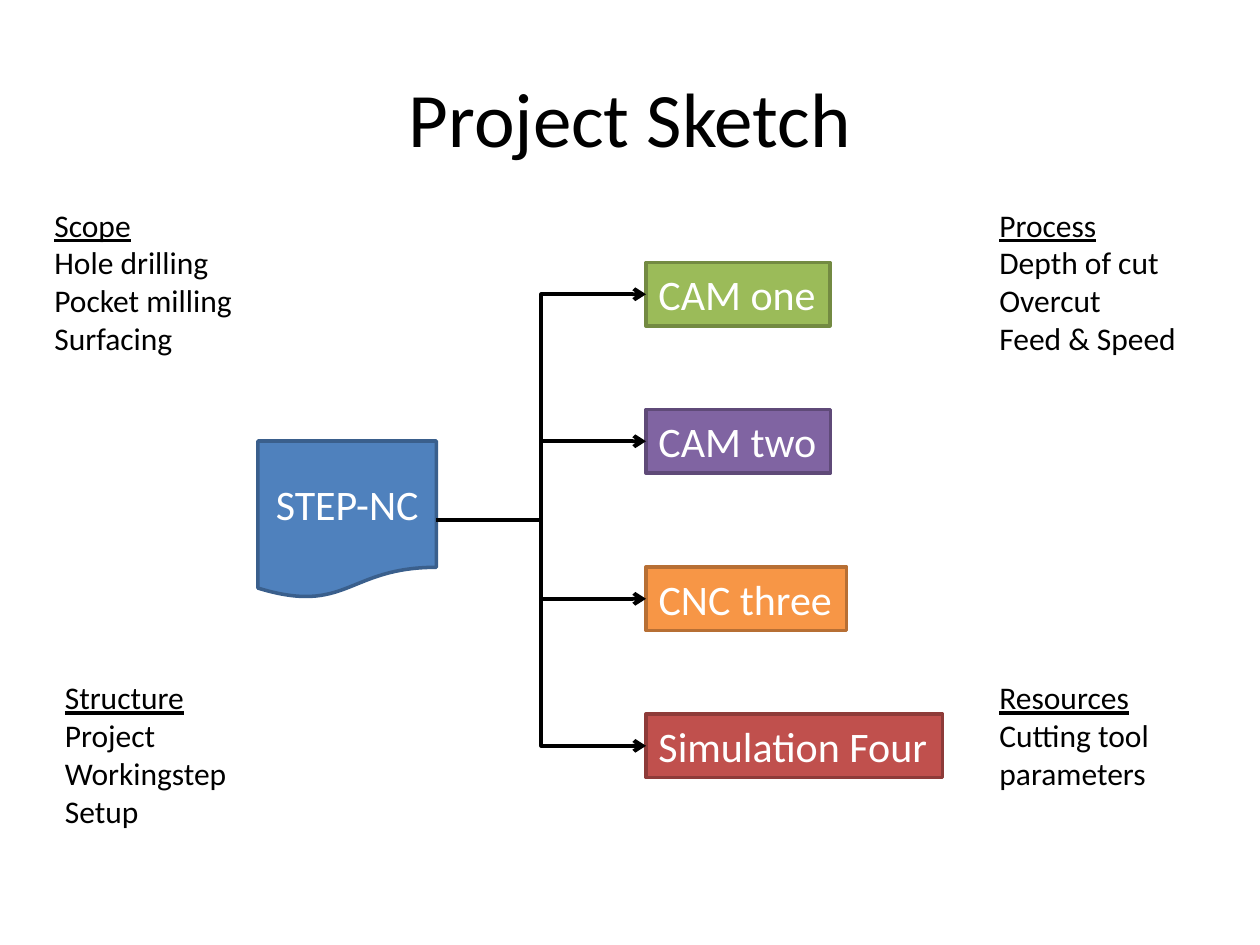
import pptx
import pptx.dml.color
import pptx.enum.shapes
import pptx.enum.text
import pptx.oxml
import pptx.oxml.ns
import pptx.util

Pt = pptx.util.Pt
SHAPES = pptx.enum.shapes.MSO_SHAPE
ALIGN = pptx.enum.text.PP_ALIGN
ANCHOR = pptx.enum.text.MSO_ANCHOR
AUTO_SIZE = pptx.enum.text.MSO_AUTO_SIZE

TARGETS = [
    ("CAM one", 150, 105, "9BBB59", "738A42"),
    ("CAM two", 234, 105.4, "8064A2", "5F4A78"),
    ("CNC three", 324, 114.6, "F79646", "B76F34"),
    ("Simulation Four", 408, 169.4, "C0504D", "8E3B39"),
]

NOTES = [
    (24, 114, 116.5, ["Scope", "Hole drilling", "Pocket milling", "Surfacing"]),
    (30, 384, 108, ["Structure", "Project", "Workingstep", "Setup"]),
    (564, 114, 116.5, ["Process", "Depth of cut", "Overcut", "Feed & Speed"]),
    (564, 384, 106, ["Resources", "Cutting tool", "parameters"]),
]


def apply_format(target, values):
    for name, value in values.items():
        setattr(target, name, value)


def set_color(color_format, value):
    color_format.rgb = pptx.dml.color.RGBColor.from_string(value)


def write_paragraph(paragraph, text, size, color, align, underline=None):
    paragraph.text = text
    paragraph.alignment = align
    apply_format(paragraph.font, {"name": "Calibri", "size": Pt(size), "underline": underline})
    set_color(paragraph.font.color, color)


def add_title(slide, text):
    title = slide.shapes.title
    apply_format(title, {"left": Pt(36), "top": Pt(21.6), "width": Pt(648), "height": Pt(90)})
    title.text_frame.vertical_anchor = ANCHOR.MIDDLE
    write_paragraph(title.text_frame.paragraphs[0], text, 44, "000000", ALIGN.CENTER)


def add_block(slide, kind, bounds, text, fill, line, align, frame_format):
    shape = slide.shapes.add_shape(kind, *map(Pt, bounds))
    shape.shadow.inherit = False
    shape.fill.solid()
    set_color(shape.fill.fore_color, fill)
    shape.line.width = Pt(2)
    set_color(shape.line.color, line)
    apply_format(shape.text_frame, frame_format)
    write_paragraph(shape.text_frame.paragraphs[0], text, 24, "FFFFFF", align)
    return shape


def add_arrow(slide, source, target):
    connector = slide.shapes.add_connector(
        pptx.enum.shapes.MSO_CONNECTOR.ELBOW, 0, 0, 0, 0)
    connector.begin_connect(source, 3)
    connector.end_connect(target, 1)
    connector.line.width = Pt(2.25)
    set_color(connector.line.color, "000000")
    namespace = pptx.oxml.ns.nsdecls("a")
    properties = connector._element.spPr
    line = properties.find(pptx.oxml.ns.qn("a:ln"))
    line.append(pptx.oxml.parse_xml(f'<a:tailEnd {namespace} type="arrow"/>'))
    properties.append(pptx.oxml.parse_xml(f"<a:effectLst {namespace}/>"))


def add_note(slide, left, top, width, lines):
    height = 7.2 + 21.8 * len(lines)
    frame = slide.shapes.add_textbox(Pt(left), Pt(top), Pt(width), Pt(height)).text_frame
    apply_format(frame, {"word_wrap": False, "auto_size": AUTO_SIZE.SHAPE_TO_FIT_TEXT})
    for index, text in enumerate(lines):
        paragraph = frame.add_paragraph() if index else frame.paragraphs[0]
        write_paragraph(paragraph, text, 18, "000000", ALIGN.LEFT, index == 0)


def main():
    presentation = pptx.Presentation()
    apply_format(presentation, {"slide_width": Pt(720), "slide_height": Pt(540)})
    slide = presentation.slides.add_slide(presentation.slide_layouts[5])
    add_title(slide, "Project Sketch")
    source = add_block(
        slide, SHAPES.FLOWCHART_DOCUMENT, (147.4, 252, 102, 90), "STEP-NC",
        "4F81BD", "3A5F8C", ALIGN.CENTER, {"vertical_anchor": ANCHOR.MIDDLE})
    target_format = {
        "word_wrap": False,
        "auto_size": AUTO_SIZE.SHAPE_TO_FIT_TEXT,
        "vertical_anchor": ANCHOR.TOP,
    }
    for text, top, width, fill, line in TARGETS:
        target = add_block(
            slide, SHAPES.RECTANGLE, (369.2, top, width, 36.35), text,
            fill, line, ALIGN.LEFT, target_format)
        add_arrow(slide, source, target)
    for note in NOTES:
        add_note(slide, *note)
    presentation.save("out.pptx")


if __name__ == "__main__":
    main()
